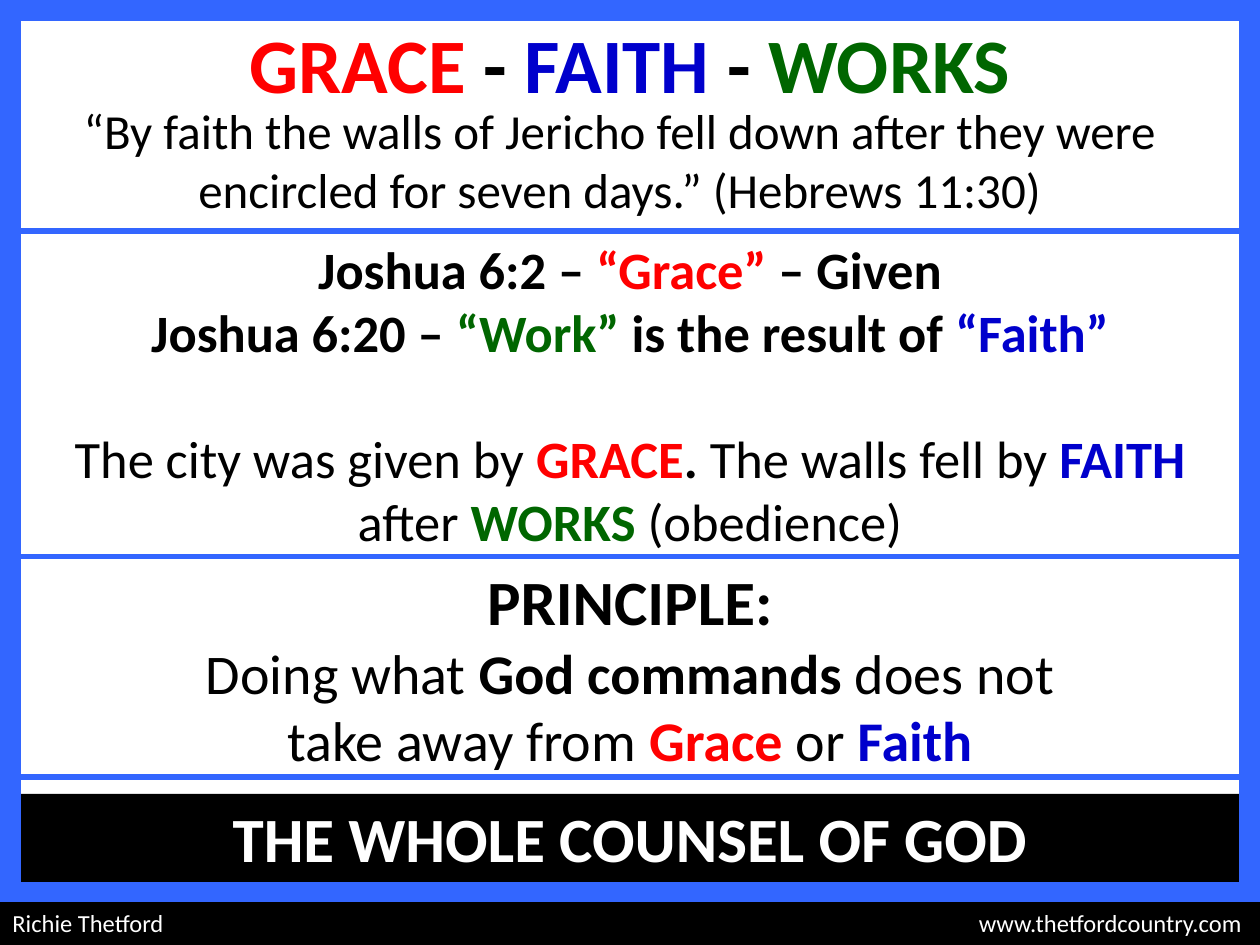
from pptx import Presentation
from pptx.dml.color import RGBColor
from pptx.enum.shapes import MSO_SHAPE as Shape
from pptx.enum.text import MSO_ANCHOR as Anchor, MSO_AUTO_SIZE as AutoSize, PP_ALIGN as Align
from pptx.oxml.ns import qn
from pptx.util import Pt
from lxml import etree

WIDTH, HEIGHT, BORDER = 720, 540, 12
BLUE, BLACK, WHITE = "3366FF", "000000", "FFFFFF"
GRACE, FAITH, WORKS = "FF0000", "0000CC", "006600"


def colour(value):
    return RGBColor.from_string(value)


def place(shape, box):
    for name, value in zip(("left", "top", "width", "height"), box):
        setattr(shape, name, Pt(value))


def add_block(slide, box, fill, line=None):
    shape = slide.shapes.add_shape(Shape.RECTANGLE, *map(Pt, box))
    shape.shadow.inherit = False
    shape.fill.solid()
    shape.fill.fore_color.rgb = colour(fill)
    if line:
        shape.line.color.rgb = colour(line)
        shape.line.width = Pt(3)
    else:
        shape.line.fill.background()
    return shape


def write(shape, paragraphs, align=Align.CENTER):
    frame = shape.text_frame
    layout = {"word_wrap": True, "auto_size": AutoSize.NONE, "vertical_anchor": Anchor.TOP,
              "margin_left": Pt(7.2), "margin_right": Pt(7.2),
              "margin_top": Pt(3.6), "margin_bottom": Pt(3.6)}
    for name, value in layout.items():
        setattr(frame, name, value)
    for index, (size, before, runs) in enumerate(paragraphs):
        paragraph = frame.add_paragraph() if index else frame.paragraphs[0]
        paragraph.alignment = align
        paragraph.space_before = Pt(before)
        for text, bold, shade in runs:
            if text == "\n":
                paragraph.add_line_break()
                continue
            run = paragraph.add_run()
            run.text = text
            formats = {"name": "Calibri", "size": Pt(size), "bold": bold}
            for name, value in formats.items():
                setattr(run.font, name, value)
            run.font.color.rgb = colour(shade)


def add_text(slide, box, paragraphs):
    write(slide.shapes.add_textbox(*map(Pt, box)), paragraphs)


def add_title(slide):
    title = slide.shapes.title
    slide.shapes._spTree.append(title._element)
    place(title, (0, 6, WIDTH, 60))
    write(title, [(44, 0, [("GRACE", True, GRACE), (" - ", True, BLACK), ("FAITH", True, FAITH),
                           (" - ", True, BLACK), ("WORKS", True, WORKS)])])


def add_footer(slide):
    footer = add_block(slide, (0, 515.5, WIDTH, 24.5), BLACK)
    properties = footer.text_frame.paragraphs[0]._p.get_or_add_pPr()
    tabs = etree.SubElement(properties, qn("a:tabLst"))
    etree.SubElement(tabs, qn("a:tab"), pos=str(Pt(702.5)), algn="r")
    write(footer, [(14, 0, [("Richie Thetford\twww.thetfordcountry.com", False, WHITE)])], Align.LEFT)


def main():
    presentation = Presentation()
    presentation.slide_width, presentation.slide_height = Pt(WIDTH), Pt(HEIGHT)
    slide = presentation.slides.add_slide(presentation.slide_layouts[5])

    add_block(slide, (0, 0, WIDTH, 132), WHITE, BLUE)
    add_title(slide)
    add_text(slide, (36, 54, 636, 75), [
        (28, 0, [("“By faith the walls of Jericho fell down after they were encircled "
                  "for seven days.” (Hebrews 11:30)", False, BLACK)])])

    add_block(slide, (9, 318, 708, 126), WHITE, BLUE)
    add_text(slide, (18, 318, 684, 128), [
        (36, 0, [("PRINCIPLE:", True, BLACK)]),
        (32, 0, [("Doing what ", False, BLACK), ("God commands ", True, BLACK),
                 ("does not", False, BLACK)]),
        (32, 0, [("take away from ", False, BLACK), ("Grace ", True, GRACE),
                 ("or ", False, BLACK), ("Faith", True, FAITH)])])
    add_text(slide, (12, 132, 696, 189), [
        (30, 0, [("Joshua 6:2 – ", True, BLACK), ("“Grace” ", True, GRACE), ("– Given", True, BLACK)]),
        (30, 0, [("Joshua 6:20 – ", True, BLACK), ("“Work” ", True, WORKS),
                 ("is the result of ", True, BLACK), ("“Faith”", True, FAITH)]),
        (30, 36, [("The city was given by ", False, BLACK), ("GRACE", True, GRACE),
                  (". ", True, BLACK), ("The walls fell by ", False, BLACK),
                  ("FAITH", True, FAITH), ("\n", False, BLACK), ("after ", False, BLACK),
                  ("WORKS ", True, WORKS), ("(obedience)", False, BLACK)])])

    banner = add_block(slide, (BORDER, 453.6, WIDTH - 2 * BORDER, 50.4), BLACK)
    write(banner, [(36, 0, [("THE WHOLE COUNSEL OF GOD", True, WHITE)])])
    for left in (0, WIDTH - BORDER):
        add_block(slide, (left, 0, BORDER, HEIGHT), BLUE)
    for top in (0, 504):
        add_block(slide, (0, top, WIDTH, BORDER), BLUE)
    add_footer(slide)
    presentation.save("out.pptx")


if __name__ == "__main__":
    main()
